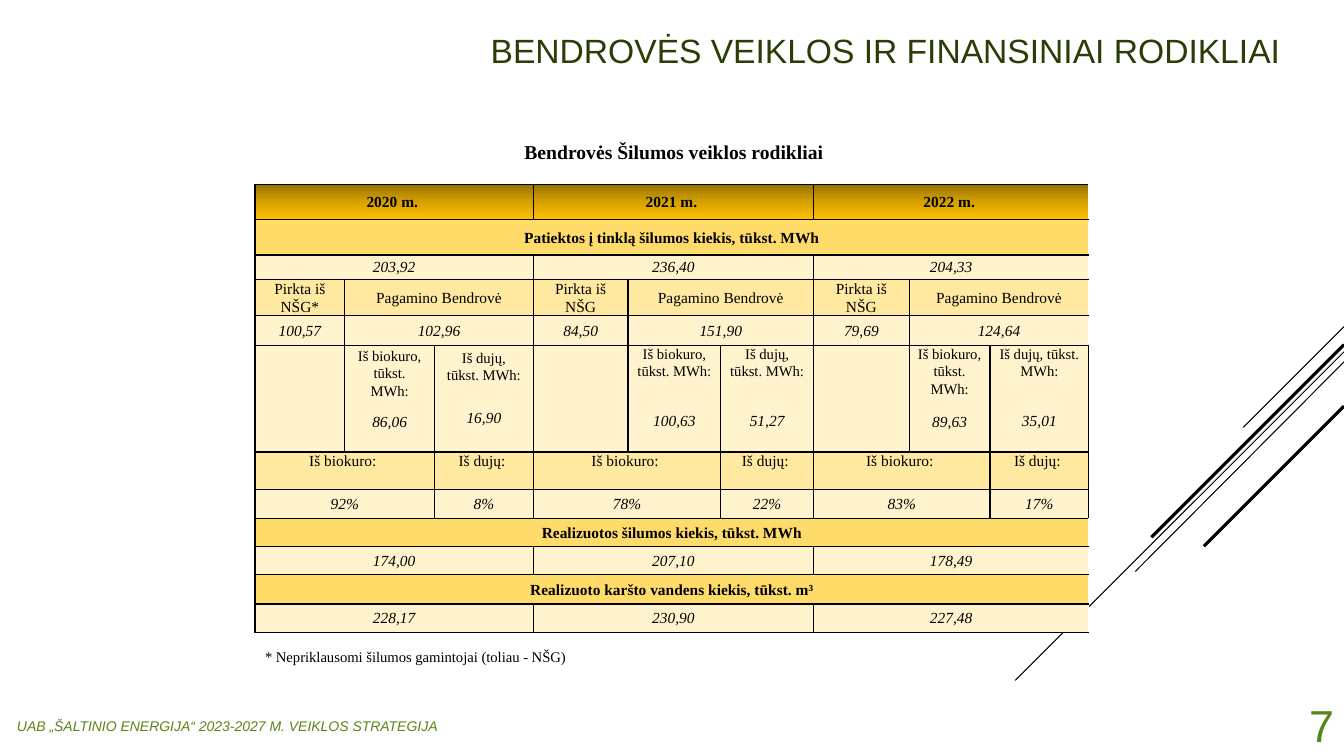
from dataclasses import dataclass
from itertools import accumulate
from typing import NamedTuple

from pptx import Presentation
from pptx.dml.color import RGBColor
from pptx.enum.shapes import MSO_CONNECTOR
from pptx.enum.text import MSO_ANCHOR as Anchor, PP_ALIGN as Align
from pptx.oxml import parse_xml
from pptx.oxml.ns import nsdecls
from pptx.slide import Slide
from pptx.table import Table, _Cell as Cell
from pptx.text.text import _Paragraph as Paragraph
from pptx.util import Inches, Pt

BLACK = RGBColor(0x00, 0x00, 0x00)
DARK_GREEN = RGBColor(0x29, 0x3E, 0x06)
GREEN = RGBColor(0x58, 0x85, 0x17)
GOLD = RGBColor(0xFF, 0xDB, 0x69)
SAND = RGBColor(0xFF, 0xE8, 0x9F)
CREAM = RGBColor(0xFF, 0xF3, 0xCD)
HEADER_STOPS = (
    (0, RGBColor(0x97, 0x72, 0x00)),
    (50, RGBColor(0xD7, 0xA2, 0x00)),
    (100, RGBColor(0xFF, 0xC0, 0x00)),
)

SANS = "Arial"
SERIF = "Times New Roman"

BOLD = {"name": SERIF, "size": Pt(11), "bold": True, "italic": False}
PLAIN = {**BOLD, "bold": False}
ITALIC = {**PLAIN, "italic": True}
SMALL = {**PLAIN, "size": Pt(10.5)}

YEARS = (3, 3, 3)
FULL = (9,)
SOURCES = (1, 2) * 3
FUELS = (2, 1) * 3
SINGLE = (1,) * 9


class DiagonalLine(NamedTuple):
    start: tuple[float, float]
    end: tuple[float, float]
    width: float


class Label(NamedTuple):
    text: str
    box: tuple[float, float, float, float]
    font: dict
    color: RGBColor
    align: Align = Align.LEFT
    anchor: Anchor = Anchor.TOP
    inset: tuple[float, float] = (0.1, 0.05)


class FuelAmount(NamedTuple):
    caption: str
    amount: str
    top: float
    gap: float


@dataclass(frozen=True)
class Row:
    height: float
    spans: tuple[int, ...]
    texts: tuple[str | FuelAmount, ...]
    font: dict
    fill: RGBColor | None = CREAM
    anchor: Anchor = Anchor.MIDDLE


LINES = (
    DiagonalLine((13.33, 3.24), (12.33, 4.24), 0.75),
    DiagonalLine((13.33, 3.49), (10.07, 6.75), 0.75),
    DiagonalLine((13.33, 3.59), (11.26, 5.67), 0.75),
    DiagonalLine((13.33, 3.42), (11.42, 5.33), 2.25),
    DiagonalLine((13.33, 4.03), (11.94, 5.42), 2.25),
)

LABELS = (
    Label("BENDROVĖS VEIKLOS IR FINANSINIAI RODIKLIAI", (2.53, 0.13, 10.27, 0.73),
          {"name": SANS, "size": Pt(24)}, DARK_GREEN, Align.RIGHT, Anchor.MIDDLE),
    Label("UAB „ŠALTINIO ENERGIJA“ 2023-2027 M. VEIKLOS STRATEGIJA", (0.07, 7.07, 8.25, 0.4),
          {"name": SANS, "size": Pt(10), "italic": True}, GREEN),
    Label("7", (12.08, 6.77, 1.25, 0.73), {"name": SANS, "size": Pt(32)},
          GREEN, Align.RIGHT, Anchor.BOTTOM),
    Label("* Nepriklausomi šilumos gamintojai (toliau - NŠG)", (2.53, 6.38, 6.75, 0.28),
          SMALL, BLACK),
    Label("Bendrovės Šilumos veiklos rodikliai", (5.05, 1.34, 3.27, 0.32),
          {**BOLD, "size": Pt(14)}, BLACK, Align.CENTER, Anchor.MIDDLE, (0.02, 0.02)),
)

TABLE_LEFT, TABLE_TOP = 2.53, 1.83
COLUMN_WIDTHS = (0.89, 0.89, 0.98, 0.94, 0.92, 0.92, 0.95, 0.8, 0.98)
MADE = "Pagamino Bendrovė"
BOUGHT = "Pirkta iš NŠG"
ROWS = (
    Row(0.35, YEARS, ("2020 m. ", "2021 m. ", "2022 m. "), BOLD, None),
    Row(0.35, FULL, ("Patiektos į tinklą šilumos kiekis, tūkst. MWh",), BOLD, GOLD),
    Row(0.24, YEARS, ("203,92", "236,40", "204,33"), ITALIC),
    Row(0.36, SOURCES, (BOUGHT + "*", MADE, BOUGHT, MADE, BOUGHT, MADE), PLAIN, SAND),
    Row(0.29, SOURCES, ("100,57", "102,96", "84,50", "151,90", "79,69", "124,64"), ITALIC),
    Row(1.06, SINGLE, (
        "",
        FuelAmount("Iš biokuro,\vtūkst.\vMWh:", "86,06", 0.02, 9.5),
        FuelAmount("Iš dujų,\vtūkst. MWh:", "16,90", 0.04, 17.5),
        "",
        FuelAmount("Iš biokuro,\vtūkst. MWh:", "100,63", 0, 22.5),
        FuelAmount("Iš dujų,\vtūkst. MWh:", "51,27", 0, 22.5),
        "",
        FuelAmount("Iš biokuro,\vtūkst.\vMWh:", "89,63", 0, 11),
        FuelAmount("Iš dujų, tūkst.\vMWh:", "35,01", 0, 22.5),
    ), ITALIC, CREAM, Anchor.TOP),
    Row(0.37, FUELS, ("Iš biokuro: ", "Iš dujų: ") * 3, PLAIN, SAND, Anchor.TOP),
    Row(0.29, FUELS, ("92%", "8%", "78%", "22%", "83%", "17%"), ITALIC),
    Row(0.28, FULL, ("Realizuotos šilumos kiekis, tūkst. MWh",), BOLD, GOLD),
    Row(0.28, YEARS, ("174,00", "207,10", "178,49"), ITALIC),
    Row(0.29, FULL, ("Realizuoto karšto vandens kiekis, tūkst. m³",), BOLD, GOLD),
    Row(0.28, YEARS, ("228,17", "230,90", "227,48"), ITALIC),
)


def apply(target: object, values: dict) -> None:
    for name, value in values.items():
        setattr(target, name, value)


def write(paragraph: Paragraph, text: str, font: dict, color: RGBColor, **layout) -> None:
    paragraph.text = text
    apply(paragraph, layout)
    apply(paragraph.font, font)
    for run in paragraph.runs:
        apply(run.font, font)
        run.font.color.rgb = color


def draw_line(slide: Slide, line: DiagonalLine) -> None:
    ends = (Inches(value) for value in (*line.start, *line.end))
    connector = slide.shapes.add_connector(MSO_CONNECTOR.STRAIGHT, *ends)
    connector.line.color.rgb = BLACK
    connector.line.width = Pt(line.width)
    connector._element.spPr.append(parse_xml(f"<a:effectLst {nsdecls('a')}/>"))


def draw_label(slide: Slide, label: Label) -> None:
    frame = slide.shapes.add_textbox(*map(Inches, label.box)).text_frame
    side, edge = map(Inches, label.inset)
    apply(frame, {"word_wrap": True, "vertical_anchor": label.anchor,
                  "margin_left": side, "margin_right": side,
                  "margin_top": edge, "margin_bottom": edge})
    write(frame.paragraphs[0], label.text, label.font, label.color, alignment=label.align)


def style_cell(cell: Cell, fill: RGBColor | None, sides: str) -> None:
    properties = cell._tc.get_or_add_tcPr()
    for side in sides:
        properties.append(parse_xml(
            f'<a:ln{side} {nsdecls("a")} w="12700"><a:solidFill>'
            f'<a:srgbClr val="{BLACK}"/></a:solidFill></a:ln{side}>'))
    if fill is not None:
        cell.fill.solid()
        cell.fill.fore_color.rgb = fill
        return
    stops = "".join(f'<a:gs pos="{position * 1000}"><a:srgbClr val="{color}"/></a:gs>'
                    for position, color in HEADER_STOPS)
    properties.append(parse_xml(
        f'<a:gradFill {nsdecls("a")}><a:gsLst>{stops}</a:gsLst>'
        '<a:lin ang="5400000" scaled="0"/></a:gradFill>'))


def fill_cell(cell: Cell, content: str | FuelAmount, row: Row) -> None:
    apply(cell, {"vertical_anchor": row.anchor, "margin_left": Inches(0.07),
                 "margin_right": Inches(0.07), "margin_top": 0, "margin_bottom": 0})
    layout = {"alignment": Align.CENTER, "line_spacing": 1.07}
    first = cell.text_frame.paragraphs[0]
    if isinstance(content, FuelAmount):
        cell.margin_top = Inches(content.top)
        write(first, content.caption, SMALL, BLACK, **layout)
        write(cell.text_frame.add_paragraph(), content.amount, row.font, BLACK,
              space_before=Pt(content.gap), **layout)
    else:
        write(first, content, row.font, BLACK, **layout)


def draw_row(table: Table, index: int, row: Row) -> None:
    table.rows[index].height = Inches(row.height)
    starts = accumulate(row.spans[:-1], initial=0)
    for start, span, content in zip(starts, row.spans, row.texts):
        last = start + span - 1
        for column in range(start, last + 1):
            sides = "L" * (column == start) + "R" * (column == last) + "TB"
            style_cell(table.cell(index, column), row.fill, sides)
        if span > 1:
            table.cell(index, start).merge(table.cell(index, last))
        fill_cell(table.cell(index, start), content, row)


def draw_table(slide: Slide) -> None:
    size = (sum(COLUMN_WIDTHS), sum(row.height for row in ROWS))
    box = map(Inches, (TABLE_LEFT, TABLE_TOP, *size))
    table = slide.shapes.add_table(len(ROWS), len(COLUMN_WIDTHS), *box).table
    apply(table, {"first_row": False, "horz_banding": False})
    for column, width in zip(table.columns, COLUMN_WIDTHS):
        column.width = Inches(width)
    for index, row in enumerate(ROWS):
        draw_row(table, index, row)


def main() -> None:
    presentation = Presentation()
    apply(presentation, {"slide_width": Inches(13.33), "slide_height": Inches(7.5)})
    slide = presentation.slides.add_slide(presentation.slide_layouts[6])
    for line in LINES:
        draw_line(slide, line)
    draw_table(slide)
    for label in LABELS:
        draw_label(slide, label)
    presentation.save("out.pptx")


if __name__ == "__main__":
    main()
